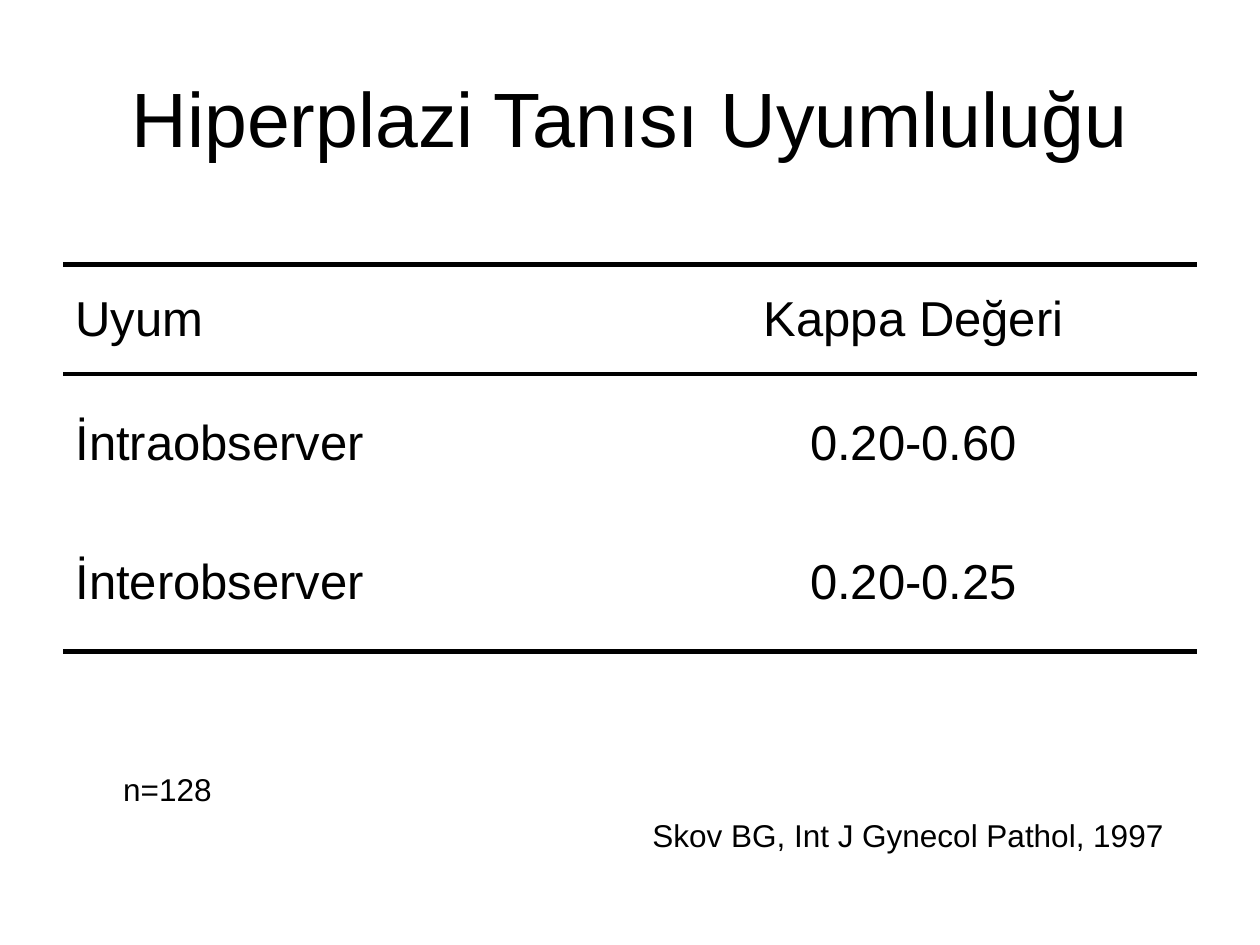
from dataclasses import dataclass

from lxml import etree
from pptx import Presentation, util as u
from pptx.dml.color import RGBColor
from pptx.enum import text
from pptx.oxml import ns


@dataclass(frozen=True)
class Theme:
    font: str = "Arial"
    ink: RGBColor = RGBColor(0, 0, 0)
    paper: RGBColor = RGBColor(255, 255, 255)
    title_size: int = 44
    table_size: int = 28
    note_size: int = 18
    rule_width: int = 3


LEFT, CENTER = text.PP_ALIGN.LEFT, text.PP_ALIGN.CENTER
AGREEMENT = [
    ("Uyum", "Kappa Değeri"),
    ("İntraobserver", "0.20-0.60"),
    ("İnterobserver", "0.20-0.25"),
]
ROW_HEIGHTS = (0.87, 1.1, 1.1)


def apply_format(target, values):
    for name, value in values.items():
        setattr(target, name, value)


class SlideBuilder:
    def __init__(self, slide, theme):
        self.slide = slide
        self.theme = theme
        slide.background.fill.solid()
        slide.background.fill.fore_color.rgb = theme.paper

    def set_text(self, frame, wording, size, **paragraph_format):
        frame.text = wording
        paragraph = frame.paragraphs[0]
        apply_format(paragraph, paragraph_format)
        font = paragraph.runs[0].font
        apply_format(font, {"name": self.theme.font, "size": u.Pt(size)})
        font.color.rgb = self.theme.ink

    def place(self, left, top, width, height):
        return [u.Inches(length) for length in (left, top, width, height)]

    def title(self, wording, *box):
        heading = self.slide.shapes.title
        sides = ("left", "top", "width", "height")
        apply_format(heading, dict(zip(sides, self.place(*box))))
        heading.text_frame.vertical_anchor = text.MSO_ANCHOR.MIDDLE
        self.set_text(heading.text_frame, wording, self.theme.title_size,
                      alignment=CENTER)

    def note(self, wording, *box):
        frame = self.slide.shapes.add_textbox(*self.place(*box)).text_frame
        apply_format(frame, {"word_wrap": False,
                             "auto_size": text.MSO_AUTO_SIZE.SHAPE_TO_FIT_TEXT})
        self.set_text(frame, wording, self.theme.note_size)

    def rule_cell(self, cell, ruled_sides):
        """Draw the named sides (T, B) and clear the others."""
        properties = cell._tc.get_or_add_tcPr()
        for position, side in enumerate("LRTB"):
            line = etree.Element(ns.qn(f"a:ln{side}"))
            if side in ruled_sides:
                line.set("w", str(u.Pt(self.theme.rule_width)))
                fill = etree.SubElement(line, ns.qn("a:solidFill"))
                etree.SubElement(fill, ns.qn("a:srgbClr"), val=str(self.theme.ink))
            else:
                etree.SubElement(line, ns.qn("a:noFill"))
            properties.insert(position, line)

    def table(self, rows, heights, left, top, width):
        """Add a table ruled above and below the header and at the foot."""
        box = self.place(left, top, width, sum(heights))
        table = self.slide.shapes.add_table(len(rows), len(rows[0]), *box).table
        apply_format(table, {"first_row": False, "horz_banding": False})
        ruled_sides = ["TB", "T"] + [""] * (len(rows) - 2)
        ruled_sides[-1] += "B"
        for r, (values, height) in enumerate(zip(rows, heights)):
            table.rows[r].height = u.Inches(height)
            for c, (wording, alignment) in enumerate(zip(values, (LEFT, CENTER))):
                cell = table.cell(r, c)
                cell.fill.background()
                cell.vertical_anchor = text.MSO_ANCHOR.MIDDLE
                self.set_text(cell.text_frame, wording, self.theme.table_size,
                              alignment=alignment,
                              space_before=u.Pt(0.2 * self.theme.table_size))
                self.rule_cell(cell, ruled_sides[r])


def main():
    deck = Presentation()
    apply_format(deck, {"slide_width": u.Inches(10), "slide_height": u.Inches(7.5)})
    title_only = deck.slide_layouts.get_by_name("Title Only")
    builder = SlideBuilder(deck.slides.add_slide(title_only), Theme())
    builder.title("Hiperplazi Tanısı Uyumluluğu", 0.5, 0.3, 9, 1.25)
    builder.table(AGREEMENT, ROW_HEIGHTS, 0.5, 2.1, 9)
    builder.note("Skov BG, Int J Gynecol Pathol, 1997", 5.08, 6.43, 4.26, 0.4)
    builder.note("n=128", 0.88, 6.06, 0.9, 0.4)
    deck.save("out.pptx")


if __name__ == "__main__":
    main()
